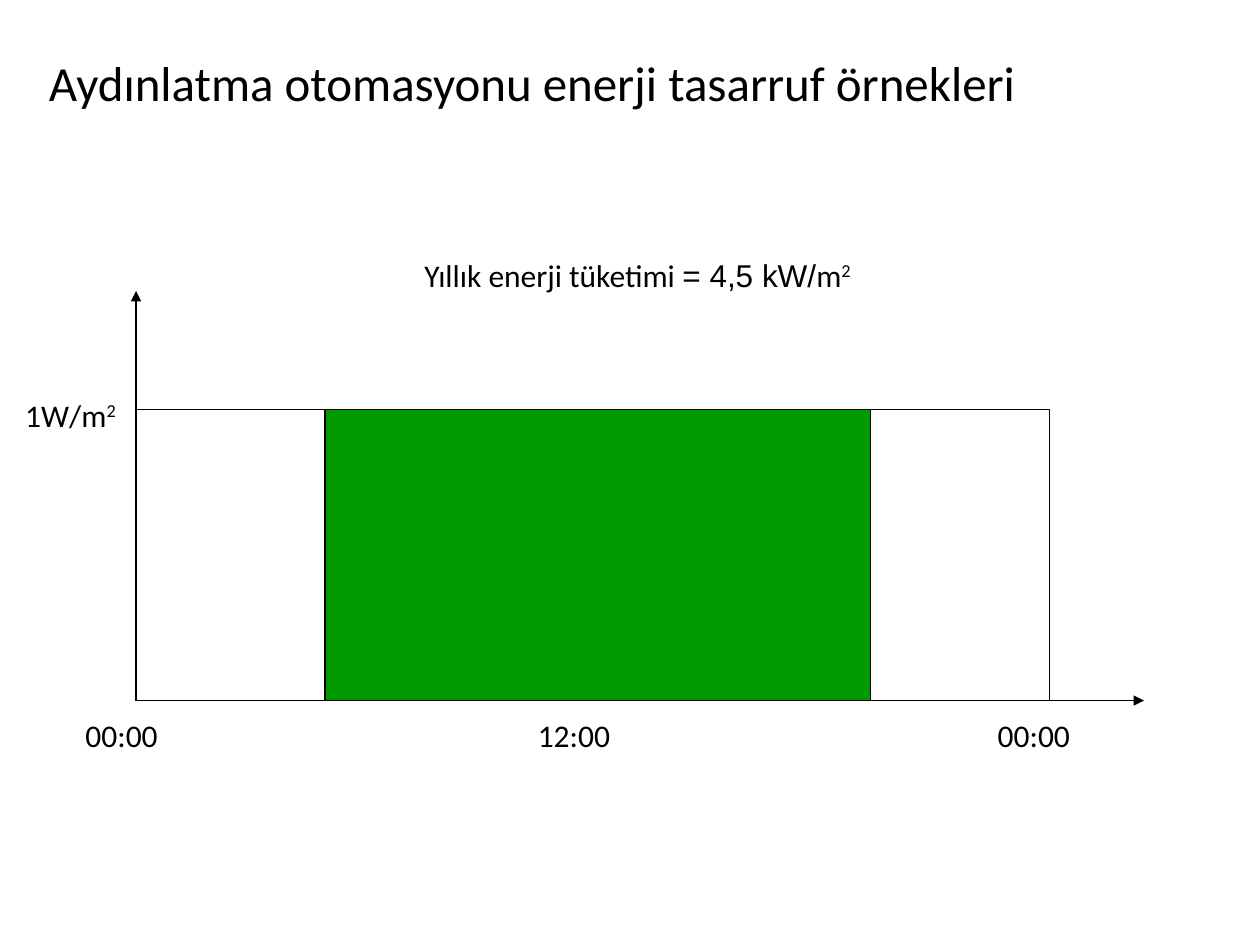
import pptx
import pptx.dml.color
import pptx.enum.shapes
import pptx.enum.text
import pptx.oxml
import pptx.oxml.ns
import pptx.util

Inches = pptx.util.Inches
COLORS = {"ink": "000000", "energy": "009900"}
RUN_FORMAT = {"name": "Calibri", "size": pptx.util.Pt(18)}
FRAME_FORMAT = {
    "word_wrap": True,
    "vertical_anchor": pptx.enum.text.MSO_ANCHOR.TOP,
    "margin_left": Inches(0.1),
    "margin_right": Inches(0.1),
    "margin_top": Inches(0.05),
    "margin_bottom": Inches(0.05),
}
SUPERSCRIPT = "30000"


def rgb(name):
    return pptx.dml.color.RGBColor.from_string(COLORS[name])


def add_label(slide, box, pieces, **frame_format):
    """Write (text, font changes) pieces as one paragraph in the box."""
    label = slide.shapes.add_textbox(*map(Inches, box))
    frame = label.text_frame
    for key, value in {**FRAME_FORMAT, **frame_format}.items():
        setattr(frame, key, value)
    for text, changes in pieces:
        run = frame.paragraphs[0].add_run()
        run.text = text
        run.font.color.rgb = rgb("ink")
        for key, value in {**RUN_FORMAT, **changes}.items():
            if key == "baseline":
                run._r.get_or_add_rPr().set(key, value)
            else:
                setattr(run.font, key, value)


def add_axis(slide, start, end):
    axis = slide.shapes.add_connector(
        pptx.enum.shapes.MSO_CONNECTOR.STRAIGHT, *map(Inches, start + end))
    axis.line.color.rgb = rgb("ink")
    axis.line.width = pptx.util.Pt(0.75)
    arrow = pptx.oxml.parse_xml(
        f'<a:tailEnd {pptx.oxml.ns.nsdecls("a")} type="triangle"/>')
    axis.line._get_or_add_ln().append(arrow)
    effects = pptx.oxml.parse_xml(
        f'<a:effectLst {pptx.oxml.ns.nsdecls("a")}/>')
    axis._element.spPr.append(effects)


def add_block(slide, box, fill=None):
    block = slide.shapes.add_shape(
        pptx.enum.shapes.MSO_SHAPE.RECTANGLE, *map(Inches, box))
    block.shadow.inherit = False
    block.line.color.rgb = rgb("ink")
    block.line.width = pptx.util.Pt(0.75)
    if fill:
        block.fill.solid()
        block.fill.fore_color.rgb = rgb(fill)
    else:
        block.fill.background()


def add_title(slide, box):
    add_label(
        slide, box,
        [("Aydınlatma otomasyonu enerji tasarruf örnekleri",
          {"size": pptx.util.Pt(28)})],
        auto_size=pptx.enum.text.MSO_AUTO_SIZE.SHAPE_TO_FIT_TEXT)


def add_load_diagram(slide, box):
    left, top, width, height = box
    base = top + height
    day_width, load_height = 7.25, 2.31
    load_top = base - load_height

    # Axes
    add_axis(slide, (left, base), (left, top))
    add_axis(slide, (left, base), (left + width, base))

    # Whole day, and the hours in use
    add_block(slide, (left, load_top, day_width, load_height))
    add_block(slide, (left + 1.5, load_top, 4.33, load_height), "energy")

    # Load and yearly consumption
    squared = ("2", {"baseline": SUPERSCRIPT})
    add_label(slide, (left - 1.02, load_top - 0.16, 1.02, 0.3),
              [("1W/m", {}), squared], margin_left=Inches(0.14))
    add_label(slide, (left + 2.19, top - 0.33, 5.43, 0.3),
              [("Yıllık enerji tüketimi ", {}),
               ("= 4,5 kW/", {"name": "Arial"}), ("m", {}), squared])

    # Hours
    for hour, offset, label_width in (
            ("00:00", -0.5, 1.49), ("12:00", 3.09, 1.1), ("00:00", 6.74, 1.49)):
        add_label(slide, (left + offset, base + 0.07, label_width, 0.3),
                  [(hour, {})])


def main():
    deck = pptx.Presentation()
    deck.slide_width = Inches(10)
    deck.slide_height = Inches(7.5)
    slide = deck.slides.add_slide(deck.slide_layouts[6])
    add_load_diagram(slide, (1.08, 2.31, 8, 3.25))
    add_title(slide, (0.29, 0.37, 9.02, 0.57))
    deck.save("out.pptx")


if __name__ == "__main__":
    main()
